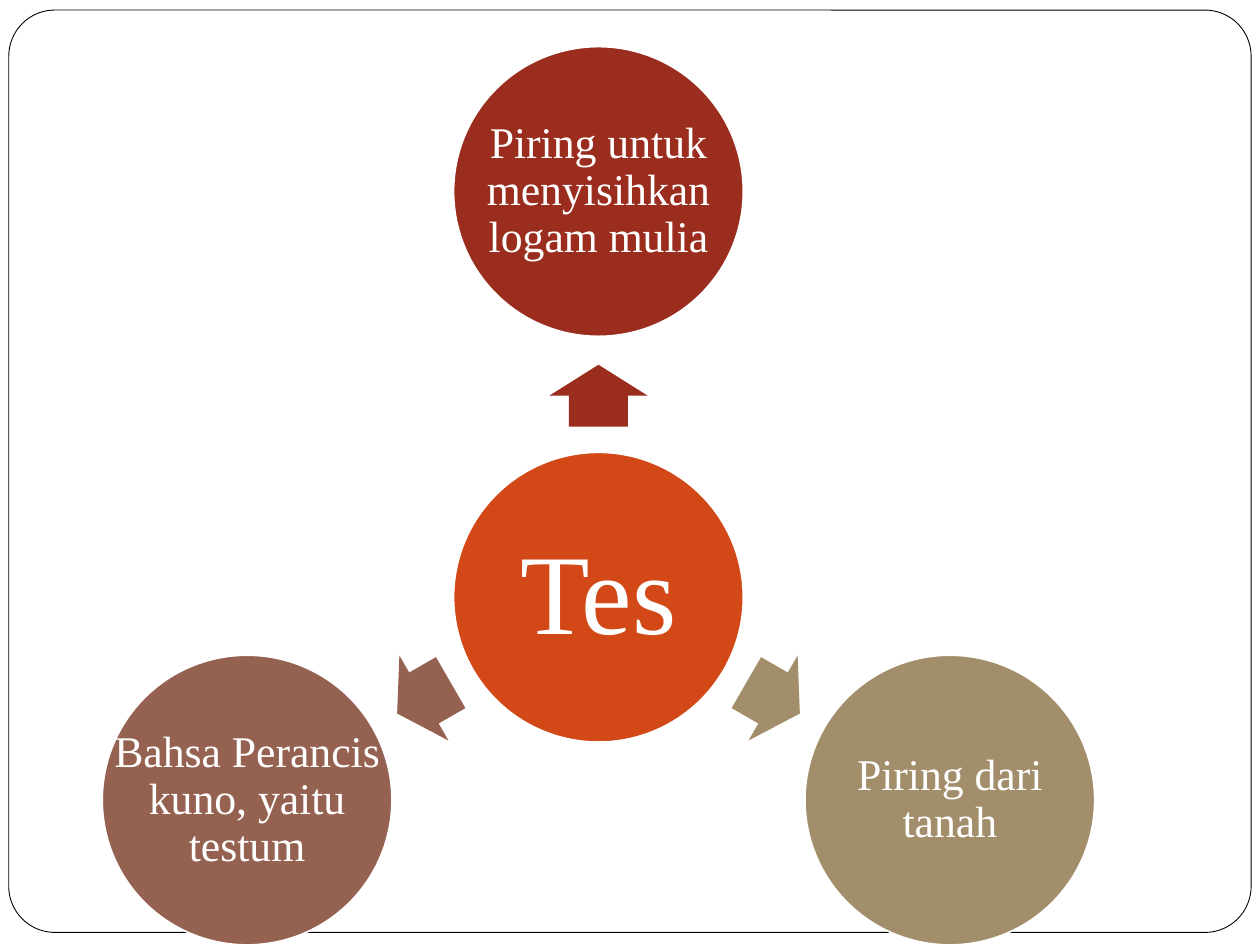
from math import cos, radians, sin

from pptx import Presentation
from pptx.dml.color import RGBColor
from pptx.enum.shapes import MSO_SHAPE as Shape
from pptx.enum.text import MSO_ANCHOR as Anchor, PP_ALIGN as Align
from pptx.util import Inches, Pt

WIDTH, HEIGHT = 10, 7.5
HUB = ("Tes", "D34817")
BRANCHES = [
    ("Piring untuk menyisihkan logam mulia", "9B2D1F", 270),
    ("Piring dari tanah", "A28E6A", 30),
    ("Bahsa Perancis kuno, yaitu testum", "956251", 150),
]
CENTER = (4.75, 4.74)
DIAMETER = 2.3
ORBIT = 3.22
ARROW_ORBIT = 1.6
ARROW_SIZE = (0.49, 0.78)


def color(value):
    return RGBColor.from_string(value)


def around(center, width, height):
    x, y = center
    return [Inches(n) for n in (x - width / 2, y - height / 2, width, height)]


def polar(angle, distance):
    turn = radians(angle)
    return CENTER[0] + distance * cos(turn), CENTER[1] + distance * sin(turn)


def add_shape(page, kind, area, fill, line=None, weight=1):
    shape = page.shapes.add_shape(kind, *area)
    shape.shadow.inherit = False
    shape.fill.solid()
    shape.fill.fore_color.rgb = color(fill)
    if line:
        shape.line.color.rgb = color(line)
        shape.line.width = Pt(weight)
    else:
        shape.line.fill.background()
    return shape


def add_text(page, text, area, size=25, inset=0.03, font="Times New Roman", ink="FFFFFF"):
    box = page.shapes.add_textbox(*area)
    frame = box.text_frame
    frame.word_wrap = True
    frame.vertical_anchor = Anchor.MIDDLE
    frame.margin_left = frame.margin_right = Inches(inset)
    frame.margin_top = frame.margin_bottom = Inches(inset)
    para = frame.paragraphs[0]
    para.alignment = Align.CENTER
    para.line_spacing = 0.9
    span = para.add_run()
    span.text = text
    span.font.name = font
    span.font.size = Pt(size)
    span.font.color.rgb = color(ink)


def add_circle(page, text, fill, center, **text_format):
    area = around(center, DIAMETER, DIAMETER)
    add_shape(page, Shape.OVAL, area, fill, line="FFFFFF")
    add_text(page, text, area, **text_format)


def add_arrow(page, fill, angle):
    area = around(polar(angle, ARROW_ORBIT), *ARROW_SIZE)
    arrow = add_shape(page, Shape.RIGHT_ARROW, area, fill)
    arrow.adjustments[0] = 0.6
    arrow.adjustments[1] = 0.5
    arrow.rotation = angle


def main():
    deck = Presentation()
    deck.slide_width, deck.slide_height = Inches(WIDTH), Inches(HEIGHT)
    page = deck.slides.add_slide(deck.slide_layouts[6])

    border_area = around((WIDTH / 2, 3.74), 9.86, 7.32)
    border = add_shape(page, Shape.ROUNDED_RECTANGLE, border_area, "FFFFFF",
                       line="000000", weight=0.5)
    border.adjustments[0] = 0.05

    add_circle(page, *HUB, CENTER, size=65, inset=0.09)
    for text, fill, angle in BRANCHES:
        add_arrow(page, fill, angle)
        add_circle(page, text, fill, polar(angle, ORBIT))

    deck.save("out.pptx")


if __name__ == "__main__":
    main()
